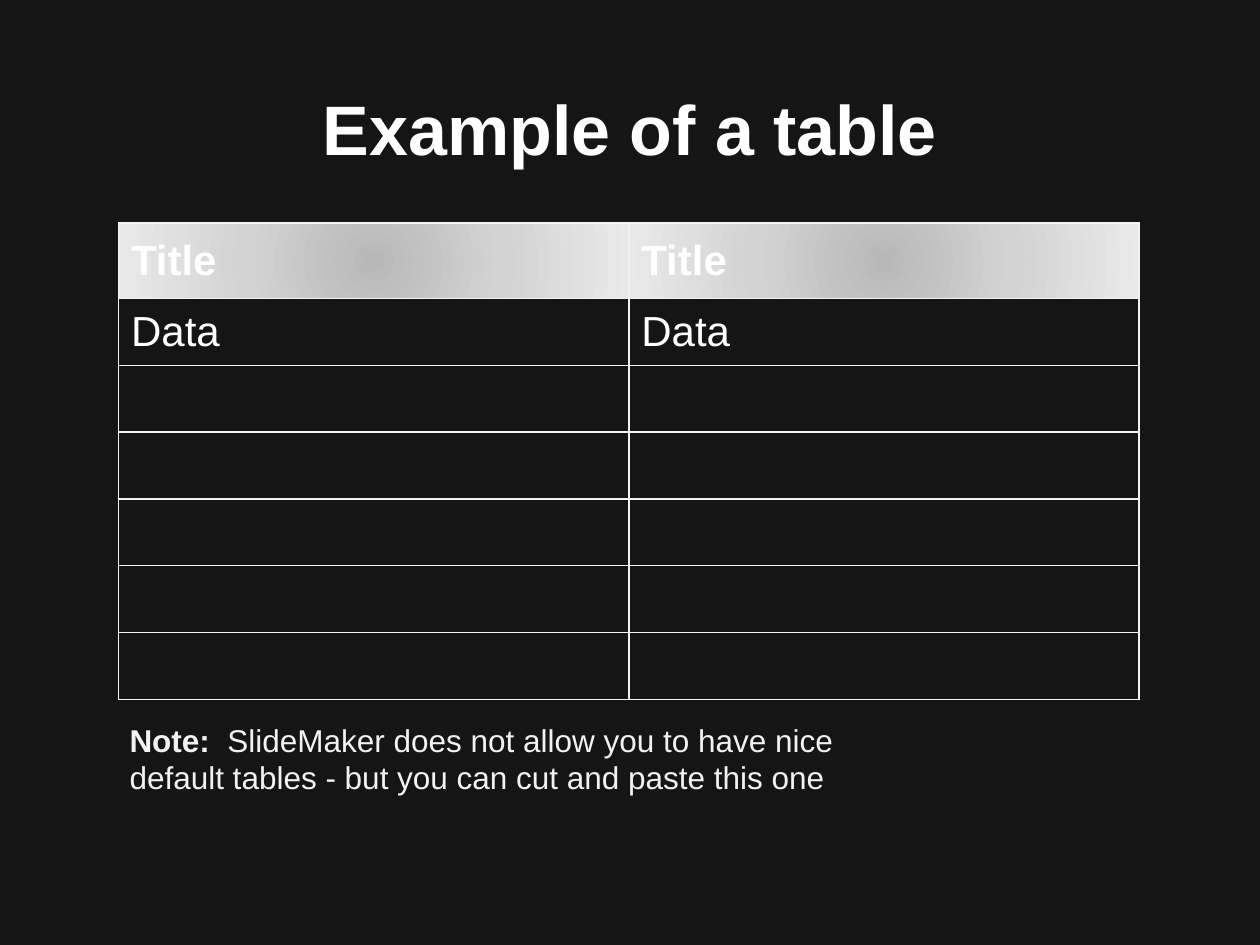
from dataclasses import dataclass

from lxml import etree
from pptx import Presentation
from pptx.dml.color import RGBColor
from pptx.enum.text import MSO_ANCHOR, PP_ALIGN
from pptx.oxml.ns import qn
from pptx.slide import Slide
from pptx.table import _Cell
from pptx.text.text import _Run
from pptx.util import Inches, Pt

CENTER = PP_ALIGN.CENTER
LEFT = PP_ALIGN.LEFT
MIDDLE = MSO_ANCHOR.MIDDLE
TOP = MSO_ANCHOR.TOP

FONT = "Arial"
COLORS = {
    "background": "151515",
    "text": "FFFFFF",
    "soft": "F2F2F2",
    "header_center": "B8B8B8",
    "header_middle": "D3D3D3",
    "header_edge": "E9E9E9",
}
HEADER_STOPS = {0: "header_center", 50: "header_middle", 100: "header_edge"}
COLUMN_WIDTH = 4.05
HEADER_HEIGHT = 0.6
ROW_HEIGHT = 0.53
ROWS = [["Title", "Title"], ["Data", "Data"]] + [["", ""]] * 5


@dataclass
class Span:
    text: str
    size: float
    color: str
    bold: bool = False


@dataclass
class TextBox:
    left: float
    top: float
    width: float
    height: float
    spans: list[Span]
    align: PP_ALIGN = LEFT
    anchor: MSO_ANCHOR = TOP


TEXT_BOXES = [
    TextBox(0.5, 0.39, 9, 1.25, [Span("Example of a table", 40, "text", True)], CENTER, MIDDLE),
    TextBox(0.93, 5.67, 6.3, 0.71, [
        Span("Note:  ", 18, "soft", True),
        Span("SlideMaker does not allow you to have nice "
             "default tables - but you can cut and paste this one", 18, "soft"),
    ]),
]


def format_run(run: _Run, span: Span) -> None:
    run.font.name = FONT
    run.font.size = Pt(span.size)
    run.font.bold = span.bold
    run.font.color.rgb = RGBColor.from_string(COLORS[span.color])


def draw_text_box(slide: Slide, item: TextBox) -> None:
    box = slide.shapes.add_textbox(
        Inches(item.left), Inches(item.top), Inches(item.width), Inches(item.height)
    )
    frame = box.text_frame
    frame.word_wrap = True
    frame.vertical_anchor = item.anchor
    para = frame.paragraphs[0]
    para.alignment = item.align
    for span in item.spans:
        run = para.add_run()
        run.text = span.text
        format_run(run, span)


def add_color(parent: etree._Element, color: str) -> None:
    etree.SubElement(parent, qn("a:srgbClr"), val=COLORS[color])


def add_borders(cell: _Cell) -> None:
    properties = cell._tc.get_or_add_tcPr()
    for side in ("L", "R", "T", "B"):
        line = etree.SubElement(properties, qn(f"a:ln{side}"), w=str(Pt(1)))
        add_color(etree.SubElement(line, qn("a:solidFill")), "soft")


def add_radial_fill(cell: _Cell) -> None:
    gradient = etree.SubElement(cell._tc.get_or_add_tcPr(), qn("a:gradFill"), rotWithShape="1")
    stops = etree.SubElement(gradient, qn("a:gsLst"))
    for percent, color in HEADER_STOPS.items():
        add_color(etree.SubElement(stops, qn("a:gs"), pos=str(percent * 1000)), color)
    shade = etree.SubElement(gradient, qn("a:path"), path="circle")
    etree.SubElement(shade, qn("a:fillToRect"), l="50000", t="50000", r="50000", b="50000")


def draw_cell(cell: _Cell, text: str, is_header: bool) -> None:
    cell.vertical_anchor = MIDDLE
    add_borders(cell)
    if is_header:
        add_radial_fill(cell)
    else:
        cell.fill.background()
    if text:
        cell.text_frame.text = text
        format_run(cell.text_frame.paragraphs[0].runs[0], Span(text, 24, "text", is_header))


def draw_table(slide: Slide) -> None:
    heights = [HEADER_HEIGHT] + [ROW_HEIGHT] * (len(ROWS) - 1)
    columns = len(ROWS[0])
    table = slide.shapes.add_table(
        len(ROWS), columns, Inches(0.94), Inches(1.77),
        Inches(COLUMN_WIDTH * columns), Inches(sum(heights)),
    ).table
    table.first_row = False
    table.horz_banding = False
    for column in table.columns:
        column.width = Inches(COLUMN_WIDTH)
    for row_index, (texts, height) in enumerate(zip(ROWS, heights)):
        table.rows[row_index].height = Inches(height)
        for column_index, text in enumerate(texts):
            draw_cell(table.cell(row_index, column_index), text, row_index == 0)


def main() -> None:
    deck = Presentation()
    deck.slide_width = Inches(10)
    deck.slide_height = Inches(7.5)
    slide = deck.slides.add_slide(deck.slide_layouts[6])
    slide.background.fill.solid()
    slide.background.fill.fore_color.rgb = RGBColor.from_string(COLORS["background"])
    title, note = TEXT_BOXES
    draw_text_box(slide, title)
    draw_table(slide)
    draw_text_box(slide, note)
    deck.save("out.pptx")


if __name__ == "__main__":
    main()
